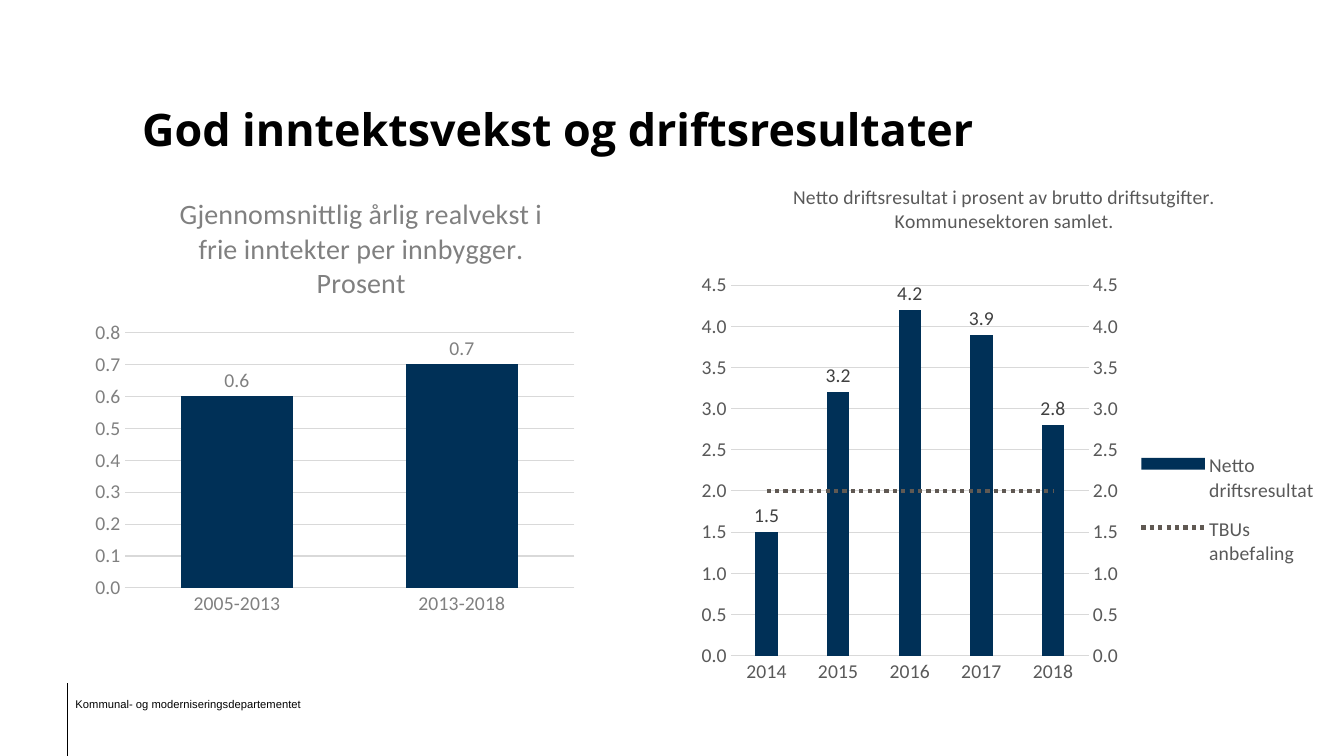
from copy import deepcopy

from pptx import Presentation
from pptx.chart.data import CategoryChartData
from pptx.dml.color import RGBColor
from pptx.enum import chart as ch, dml, shapes, text
from pptx.oxml import parse_xml
from pptx.oxml.ns import nsdecls, qn
from pptx.util import Pt

NAVY, GRID = "003057", "D9D9D9"


def rgb(value):
    return RGBColor.from_string(value)


def set_font(font, size, color, name="Calibri", bold=False):
    font.size, font.name, font.bold = Pt(size), name, bold
    font.color.rgb = rgb(color)


def remove_children(element, tag):
    for child in element.findall(qn(tag)):
        element.remove(child)


def set_layout(element, index, inner=False, **fractions):
    """Place a chart part by fractions of the chart; index is its slot for c:layout."""
    remove_children(element, "c:layout")
    target = '<c:layoutTarget val="inner"/>' if inner else ""
    modes = "".join(f'<c:{k}Mode val="edge"/>' for k in "xy")
    sizes = "".join(f'<c:{k} val="{v}"/>' for k, v in fractions.items())
    element.insert(index, parse_xml(
        f'<c:layout {nsdecls("c")}><c:manualLayout>{target}{modes}{sizes}'
        '</c:manualLayout></c:layout>'))


def add_title(s, box):
    sp = s.shapes.title
    sp.left, sp.top, sp.width, sp.height = map(Pt, box)
    tf = sp.text_frame
    tf.text = "God inntektsvekst og driftsresultater"
    tf.vertical_anchor = text.MSO_ANCHOR.BOTTOM
    p = tf.paragraphs[0]
    p.alignment = text.PP_ALIGN.LEFT
    set_font(p.runs[0].font, 32, "000000", "Open Sans", True)


def add_footer(s, box):
    left, top, width, height = box
    line = s.shapes.add_connector(shapes.MSO_CONNECTOR.STRAIGHT, Pt(left + 1.5), Pt(top - 8),
                                  Pt(left + 1.5), Pt(540))
    line.line.width = Pt(0.75)
    line.line.color.rgb = rgb("000000")
    line.element.spPr.append(parse_xml(f'<a:effectLst {nsdecls("a")}/>'))
    tf = s.shapes.add_textbox(Pt(left), Pt(top), Pt(width), Pt(height)).text_frame
    tf.word_wrap = True
    tf.text = "Kommunal- og moderniseringsdepartementet"
    p = tf.paragraphs[0]
    p.line_spacing = 0.9
    set_font(p.runs[0].font, 8, "000000", "Arial")


def add_columns(s, box, title, title_size, title_at, cats, series, color, label_color,
                top_value, step, gap, overlap, plot):
    data = CategoryChartData(number_format="0.0")
    data.categories = cats
    for name, values in series:
        data.add_series(name, values)
    chart = s.shapes.add_chart(ch.XL_CHART_TYPE.COLUMN_CLUSTERED, *map(Pt, box), data).chart
    set_font(chart.font, 14, color)
    chart.has_legend = False

    tf = chart.chart_title.text_frame
    tf.text = title
    set_font(tf.paragraphs[0].runs[0].font, title_size, color)
    set_layout(chart.element.xpath("c:chart/c:title")[0], 1, x=title_at[0], y=title_at[1])
    set_layout(chart.element.xpath("c:chart/c:plotArea")[0], 0, True, **plot)

    for axis in (chart.category_axis, chart.value_axis):
        axis.major_tick_mark = axis.minor_tick_mark = ch.XL_TICK_MARK.NONE
        set_font(axis.tick_labels.font, 14, color)
    cat, val = chart.category_axis, chart.value_axis
    cat.format.line.color.rgb = rgb(GRID)
    cat.format.line.width = Pt(0.75)
    val.format.line.fill.background()
    val.minimum_scale, val.maximum_scale, val.major_unit = 0, top_value, step
    val.tick_labels.number_format = "#,##0.0"
    val.tick_labels.number_format_is_linked = False
    val.major_gridlines.format.line.color.rgb = rgb(GRID)
    val.major_gridlines.format.line.width = Pt(0.75)

    bars = chart.plots[0]
    bars.gap_width, bars.overlap, bars.vary_by_categories = gap, overlap, False
    columns = bars.series[0]
    columns.format.fill.solid()
    columns.format.fill.fore_color.rgb = rgb(NAVY)
    labels = columns.data_labels
    labels.show_value = True
    labels.position = ch.XL_LABEL_POSITION.OUTSIDE_END
    labels.number_format, labels.number_format_is_linked = "0.0", False
    set_font(labels.font, 14, label_color)
    return chart


def move_last_series_to_line(chart):
    """Turn the last column series into a line on a right-hand axis."""
    plot_area = chart.element.xpath("c:chart/c:plotArea")[0]
    bars = plot_area.find(qn("c:barChart"))
    ser = bars.findall(qn("c:ser"))[-1]
    remove_children(ser, "c:invertIfNegative")
    lines = parse_xml(
        f'<c:lineChart {nsdecls("c")}><c:grouping val="standard"/><c:varyColors val="0"/>'
        '<c:marker val="1"/><c:axId val="501"/><c:axId val="502"/></c:lineChart>')
    lines.insert(2, ser)
    bars.addnext(lines)

    cat, val = (deepcopy(plot_area.find(qn(tag))) for tag in ("c:catAx", "c:valAx"))
    remove_children(val, "c:majorGridlines")
    for axis, changes in (
            (cat, {"axId": "501", "crossAx": "502", "delete": "1"}),
            (val, {"axId": "502", "crossAx": "501", "axPos": "r", "crosses": "max"})):
        for tag, value in changes.items():
            axis.find(qn(f"c:{tag}")).set("val", value)
    plot_area.find(qn("c:valAx")).addnext(val)
    val.addnext(cat)
    return chart.plots[1].series[0]


def add_growth_chart(s, box):
    add_columns(s, box, "Gjennomsnittlig årlig realvekst i frie inntekter per innbygger. Prosent",
                20, (0.18, 0.03), ["2005-2013", "2013-2018"], [("Series 1", (0.6, 0.7))],
                "808080", "808080", 0.8, 0.1, 100, -24, dict(x=0.08, y=0.35, w=0.9, h=0.57))


def add_result_chart(s, box):
    years = [str(year) for year in range(2014, 2019)]
    chart = add_columns(
        s, box, "Netto driftsresultat i prosent av brutto driftsutgifter. Kommunesektoren samlet.",
        14, (0.18, 0.04), years,
        [("Netto driftsresultat", (1.5, 3.2, 4.2, 3.9, 2.8)), ("TBUs anbefaling", [2] * 5)],
        "595959", "404040", 4.5, 0.5, 219, 0, dict(x=0.09, y=0.24, w=0.55, h=0.7))
    target = move_last_series_to_line(chart)
    target.smooth = False
    target.marker.style = ch.XL_MARKER_STYLE.NONE
    target.format.line.color.rgb = rgb("605953")
    target.format.line.width = Pt(3)
    target.format.line.dash_style = dml.MSO_LINE.ROUND_DOT
    chart.has_legend = True
    chart.legend.position = ch.XL_LEGEND_POSITION.RIGHT
    chart.legend.include_in_layout = False
    set_font(chart.legend.font, 14, "595959")
    set_layout(chart.element.xpath("c:chart/c:legend")[0], 1, x=0.72, y=0.53, w=0.28, h=0.27)


def main():
    prs = Presentation()
    prs.slide_width, prs.slide_height = Pt(960), Pt(540)
    s = prs.slides.add_slide(prs.slide_layouts[5])
    add_footer(s, (46.8, 496, 204, 16))
    add_title(s, (94.3, 24.5, 771, 90))
    add_growth_chart(s, (60.5, 125.3, 357, 320.4))
    add_result_chart(s, (480.2, 113, 465, 378))
    prs.save("out.pptx")


if __name__ == "__main__":
    main()
